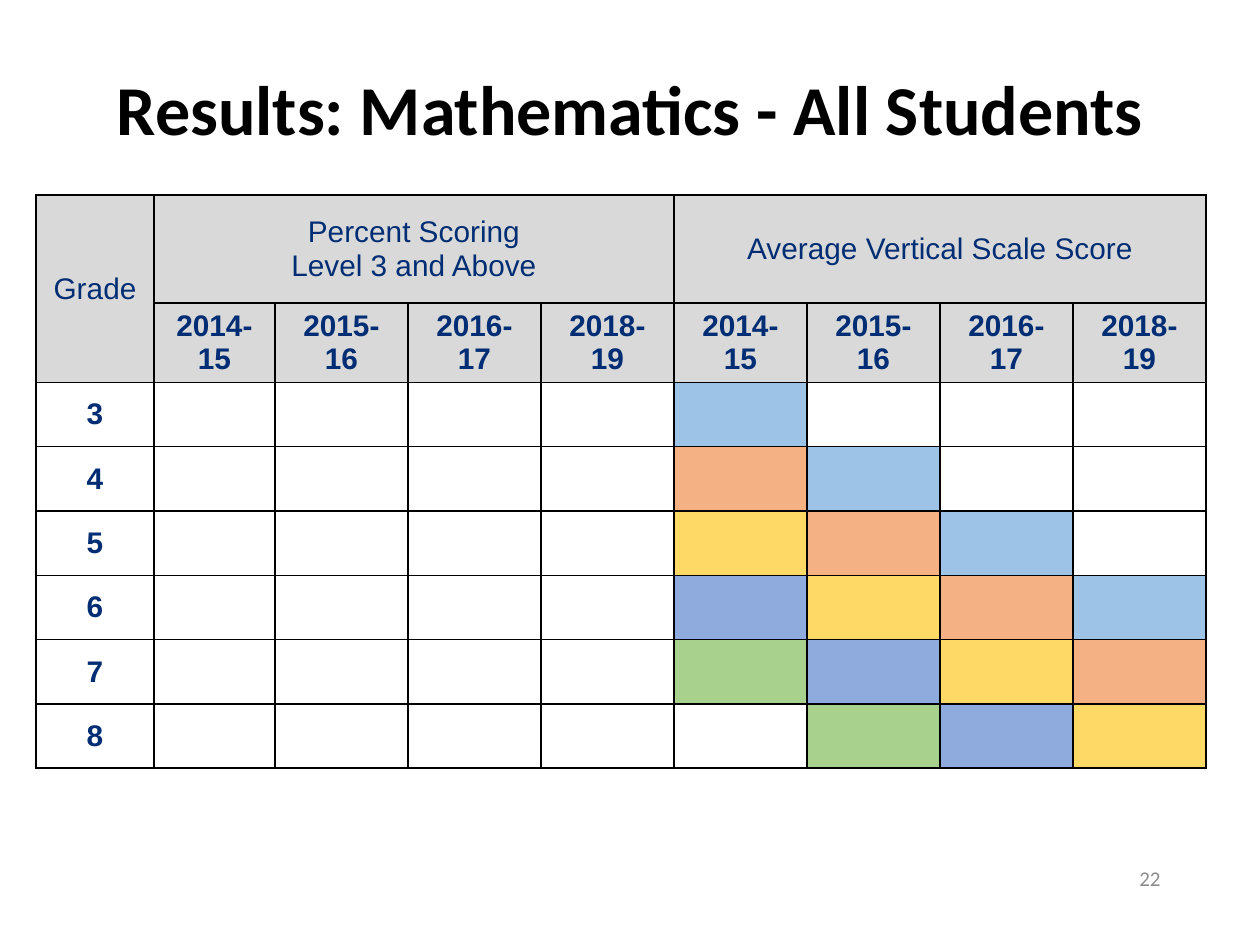
from dataclasses import dataclass

from lxml import etree
from pptx import Presentation
from pptx import util as u
from pptx.dml.color import RGBColor
from pptx.enum import text
from pptx.oxml.ns import qn

PX_PER_INCH = 126
CENTER, RIGHT = text.PP_ALIGN.CENTER, text.PP_ALIGN.RIGHT


@dataclass(frozen=True)
class Theme:
    heading_font: str = "Calibri"
    table_font: str = "Arial"
    title_size: int = 40
    table_size: int = 17
    number_size: int = 12
    ink: str = "000000"
    navy: str = "002D73"
    muted: str = "8C8C8C"
    header: str = "D9D9D9"
    blank: str = "FFFFFF"
    # One colour per cohort, by its grade in the first year (3 to 7)
    cohorts: tuple = ("9DC3E6", "F4B183", "FFD966", "8FAADC", "A9D18E")


class SlideBuilder:
    def __init__(self, deck, theme):
        self.theme = theme
        self.slide = deck.slides.add_slide(deck.slide_layouts[5])

    @staticmethod
    def px(*lengths):
        return [u.Emu(round(n * 914400 / PX_PER_INCH)) for n in lengths]

    def set_text(self, frame, words, align, color, **font):
        frame.text = words
        for paragraph in frame.paragraphs:
            paragraph.alignment = align
            for name, value in font.items():
                setattr(paragraph.font, name, value)
            paragraph.font.color.rgb = RGBColor.from_string(color)

    def format_frame(self, frame):
        settings = {"word_wrap": True, "auto_size": text.MSO_AUTO_SIZE.NONE,
                    "vertical_anchor": text.MSO_ANCHOR.MIDDLE}
        for name, value in settings.items():
            setattr(frame, name, value)

    def title(self, words, *box):
        heading = self.slide.shapes.title
        for name, value in zip(("left", "top", "width", "height"), self.px(*box)):
            setattr(heading, name, value)
        self.format_frame(heading.text_frame)
        self.set_text(heading.text_frame, words, CENTER, self.theme.ink, bold=True,
                      name=self.theme.heading_font, size=u.Pt(self.theme.title_size))
        heading.text_frame.paragraphs[0].line_spacing = 0.9

    def page_number(self, number, *box):
        frame = self.slide.shapes.add_textbox(*self.px(*box)).text_frame
        self.format_frame(frame)
        self.set_text(frame, str(number), RIGHT, self.theme.muted,
                      name=self.theme.heading_font, size=u.Pt(self.theme.number_size))

    def table(self, left, top, widths, heights):
        box = self.px(left, top, sum(widths), sum(heights))
        grid = self.slide.shapes.add_table(len(heights), len(widths), *box).table
        grid.first_row = grid.horz_banding = False
        for column, width in zip(grid.columns, self.px(*widths)):
            column.width = width
        for row, height in zip(grid.rows, self.px(*heights)):
            row.height = height
        for cell in grid.iter_cells():
            self.border(cell)
            self.fill(cell, self.theme.blank)
            cell.vertical_anchor = text.MSO_ANCHOR.MIDDLE
        return grid

    def border(self, cell):
        properties = cell._tc.get_or_add_tcPr()
        for side in ("a:lnL", "a:lnR", "a:lnT", "a:lnB"):
            line = etree.SubElement(properties, qn(side), w=str(int(u.Pt(1))))
            paint = etree.SubElement(line, qn("a:solidFill"))
            etree.SubElement(paint, qn("a:srgbClr"), val=self.theme.ink)

    def fill(self, cell, color):
        cell.fill.solid()
        cell.fill.fore_color.rgb = RGBColor.from_string(color)

    def label(self, cell, words, color, bold=False):
        self.fill(cell, color)
        self.set_text(cell.text_frame, words, CENTER, self.theme.navy, bold=bold,
                      name=self.theme.table_font, size=u.Pt(self.theme.table_size))


def main():
    deck = Presentation()
    deck.slide_width, deck.slide_height = SlideBuilder.px(1260, 945)
    theme = Theme()
    page = SlideBuilder(deck, theme)
    page.title("Results: Mathematics - All Students", 0, 50, 1260, 126)

    years = ("2014-15", "2015-16", "2016-17", "2018-19")
    measures = ("Percent Scoring\nLevel 3 and Above", "Average Vertical Scale Score")
    grades = range(3, 9)
    results = page.table(36, 195, [118, 121] + [133] * 7, [108, 62] + [64.3] * 6)

    # Headers: grade, then each measure over its years
    results.cell(0, 0).merge(results.cell(1, 0))
    page.label(results.cell(0, 0), "Grade", theme.header)
    for index, measure in enumerate(measures):
        first = 1 + index * len(years)
        results.cell(0, first).merge(results.cell(0, first + len(years) - 1))
        page.label(results.cell(0, first), measure, theme.header)
        for offset, year in enumerate(years):
            page.label(results.cell(1, first + offset), year, theme.header, bold=True)

    # Grades: each cohort moves down one grade a year, along a diagonal
    for step, grade in enumerate(grades):
        page.label(results.cell(step + 2, 0), str(grade), theme.blank, bold=True)
        for offset in range(len(years)):
            cohort = step - offset
            if 0 <= cohort < len(theme.cohorts):
                score = results.cell(step + 2, 1 + len(years) + offset)
                page.fill(score, theme.cohorts[cohort])

    page.page_number(22, 890, 853, 283, 50)
    deck.save("out.pptx")


if __name__ == "__main__":
    main()
